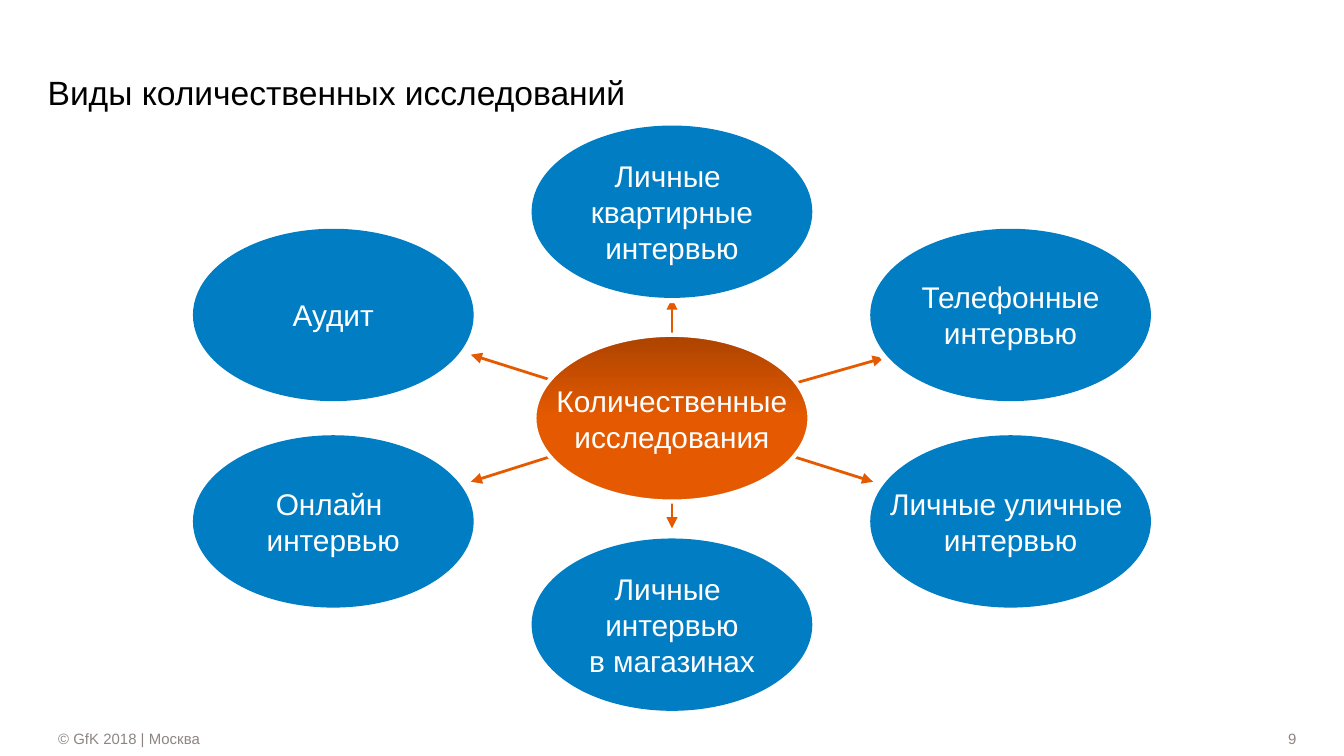
from lxml import etree
from pptx import Presentation
from pptx import util as u
from pptx.dml.color import RGBColor
from pptx.enum import shapes, text
from pptx.oxml.ns import qn

BLUE = RGBColor(0x00, 0x7D, 0xC3)
ORANGE = RGBColor(0xE5, 0x5A, 0x00)
DARK_ORANGE = RGBColor(0xAC, 0x43, 0x00)
GRAY = RGBColor(0x8E, 0x85, 0x81)
WHITE = RGBColor(0xFF, 0xFF, 0xFF)
BLACK = RGBColor(0x00, 0x00, 0x00)

# Ellipse sizes and spacing, in centimetres
OVAL = (5.2, 3.15)
HALO = (5.59, 3.45)
STEP_X, STEP_Y = 6.4, 1.95

# Lines of each topic, column and row on the grid, arrow tip from the centre
TOPICS = [
    (["Личные ", "интервью", "в магазинах"], 0, 2, (0, 2.08)),
    (["Личные ", "квартирные", "интервью"], 0, -2, (0, -2.26)),
    (["Онлайн ", "интервью"], -1, 1, (-3.8, 1.2)),
    (["Телефонные", "интервью"], 1, -1, (4, -1.14)),
    (["Аудит"], -1, -1, (-3.8, -1.2)),
    (["Личные уличные ", "интервью"], 1, 1, (3.8, 1.2)),
]


def write_lines(frame, lines, size, color, align, anchor, wrap):
    frame.word_wrap = wrap
    frame.vertical_anchor = anchor
    for index, line in enumerate(lines):
        paragraph = frame.add_paragraph() if index else frame.paragraphs[0]
        paragraph.alignment = align
        run = paragraph.add_run()
        run.text = line
        run.font.name = "Arial"
        run.font.size = u.Pt(size)
        run.font.color.rgb = color


def clear_margins(frame):
    frame.margin_left = frame.margin_right = 0
    frame.margin_top = frame.margin_bottom = 0


def add_oval(slide, x, y, size, fill=None, lines=()):
    """Add an ellipse centred on x, y."""
    width, height = size
    oval = slide.shapes.add_shape(
        shapes.MSO_SHAPE.OVAL, u.Cm(x - width / 2), u.Cm(y - height / 2),
        u.Cm(width), u.Cm(height))
    oval.shadow.inherit = False
    oval.line.fill.background()
    if fill is not None:
        oval.fill.solid()
        oval.fill.fore_color.rgb = fill
    write_lines(oval.text_frame, lines, 16, WHITE, text.PP_ALIGN.CENTER,
                text.MSO_ANCHOR.MIDDLE, False)
    return oval


def set_outline(shape, color, width):
    shape.line.color.rgb = color
    shape.line.width = u.Pt(width)


def add_arrow(slide, x, y, tip):
    arrow = slide.shapes.add_connector(
        shapes.MSO_CONNECTOR.STRAIGHT, u.Cm(x), u.Cm(y),
        u.Cm(x + tip[0]), u.Cm(y + tip[1]))
    set_outline(arrow, ORANGE, 1.5)
    properties = arrow._element.spPr
    etree.SubElement(properties.find(qn("a:ln")), qn("a:tailEnd"), type="triangle")
    etree.SubElement(properties, qn("a:effectLst"))


def add_title(slide, left, top, width, height):
    title = slide.shapes.title
    title.left, title.top = u.Cm(left), u.Cm(top)
    title.width, title.height = u.Cm(width), u.Cm(height)
    clear_margins(title.text_frame)
    write_lines(title.text_frame, ["Виды количественных исследований"], 18,
                BLACK, text.PP_ALIGN.LEFT, text.MSO_ANCHOR.BOTTOM, True)


def add_diagram(slide, left, top, width, height):
    x, y = left + width / 2, top + height / 2

    # Arrows lie behind the ellipses
    for _, _, _, tip in TOPICS:
        add_arrow(slide, x, y, tip)

    # Central ellipse with a gradient
    hub = add_oval(slide, x, y, OVAL, lines=["Количественные", "исследования"])
    hub.fill.gradient()
    hub.fill.gradient_angle = 270
    dark, light = hub.fill.gradient_stops
    dark.color.rgb, dark.position = DARK_ORANGE, 0
    light.color.rgb, light.position = ORANGE, 0.5
    set_outline(hub, WHITE, 2.25)

    # Topics, each on a white halo
    for lines, column, row, _ in TOPICS:
        topic_x, topic_y = x + column * STEP_X, y + row * STEP_Y
        add_oval(slide, topic_x, topic_y, HALO, WHITE)
        topic = add_oval(slide, topic_x, topic_y, OVAL, BLUE, lines)
        set_outline(topic, BLUE, 3)


def add_footer(slide, left, top, width, height):
    number_width = 3.6
    parts = [
        ("© GfK 2018 | Москва", left, width - number_width, text.PP_ALIGN.LEFT),
        ("9", left + width - number_width, number_width, text.PP_ALIGN.RIGHT),
    ]
    for line, part_left, part_width, align in parts:
        box = slide.shapes.add_textbox(
            u.Cm(part_left), u.Cm(top), u.Cm(part_width), u.Cm(height))
        clear_margins(box.text_frame)
        write_lines(box.text_frame, [line], 8, GRAY, align,
                    text.MSO_ANCHOR.MIDDLE, True)


def main():
    presentation = Presentation()
    presentation.slide_width = u.Cm(25.4)
    presentation.slide_height = u.Cm(14.28)
    slide = presentation.slides.add_slide(presentation.slide_layouts[5])
    add_title(slide, 0.9, 0.53, 17.8, 1.6)
    add_diagram(slide, 3.5, 2.2, 18.4, 11.4)
    add_footer(slide, 1.1, 13.75, 23.4, 0.4)
    presentation.save("out.pptx")


if __name__ == "__main__":
    main()
